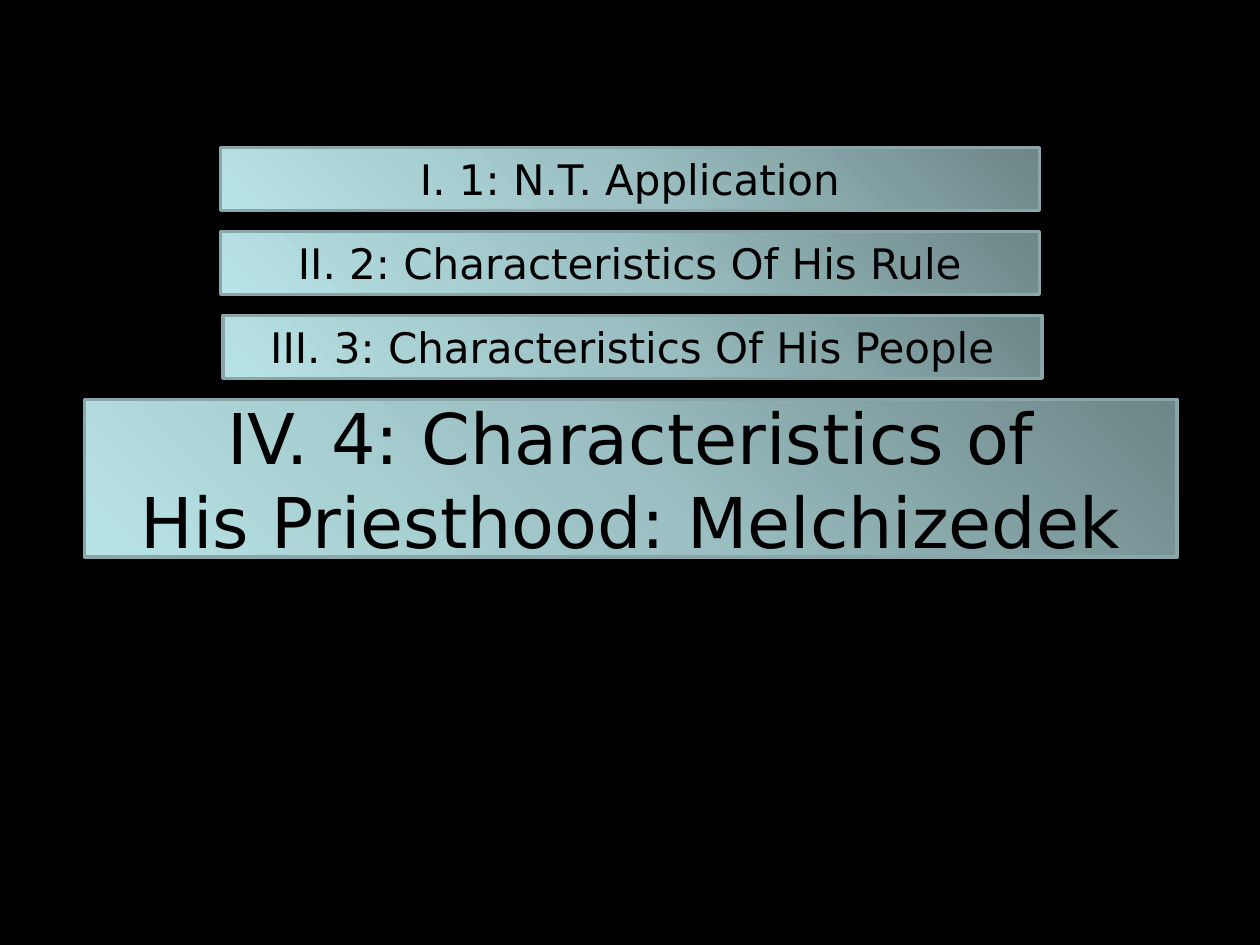
from lxml import etree
from pptx import Presentation
from pptx.dml.color import RGBColor
from pptx.enum.shapes import MSO_SHAPE as Shape
from pptx.enum.text import MSO_ANCHOR as Anchor, PP_ALIGN as Align
from pptx.oxml.ns import qn
from pptx.util import Inches, Pt

BLACK = RGBColor(0x00, 0x00, 0x00)
DARK_TEAL = RGBColor(0x6D, 0x86, 0x88)
MID_TEAL = RGBColor(0x9B, 0xBF, 0xC2)
LIGHT_TEAL = RGBColor(0xB8, 0xE3, 0xE6)
BORDER = RGBColor(0x8A, 0xA6, 0xA8)


class OutlineSlide:
    """Holds the style and the slide being filled."""

    font_name = "DejaVu Sans"
    gradient = ((0, DARK_TEAL), (50, MID_TEAL), (100, LIGHT_TEAL))

    def __init__(self, presentation):
        self.slide = presentation.slides.add_slide(presentation.slide_layouts[6])
        background = self.slide.background.fill
        background.solid()
        background.fore_color.rgb = BLACK

    def add_gradient(self, shape):
        shape.fill.gradient()
        shape.fill.gradient_angle = 225  # counter-clockwise: dark at top right
        stops = shape._element.spPr.find(".//" + qn("a:gsLst"))
        stops.clear()
        for position, color in self.gradient:
            stop = etree.SubElement(stops, qn("a:gs"), pos=str(position * 1000))
            etree.SubElement(stop, qn("a:srgbClr"), val=str(color))

    def add_shadow(self, shape):
        shape.shadow.inherit = False
        effects = shape._element.spPr.find(qn("a:effectLst"))
        shadow = etree.SubElement(
            effects, qn("a:outerShdw"), blurRad=str(Pt(4)), dist=str(Pt(3)),
            dir=str(45 * 60000), rotWithShape="0")
        color = etree.SubElement(shadow, qn("a:srgbClr"), val=str(BLACK))
        etree.SubElement(color, qn("a:alpha"), val="40000")

    def add_bar(self, left, top, width, height, lines, size):
        shape = self.slide.shapes.add_shape(
            Shape.RECTANGLE, Inches(left), Inches(top), Inches(width), Inches(height))
        self.add_gradient(shape)
        shape.line.color.rgb = BORDER
        shape.line.width = Pt(2)
        self.add_shadow(shape)

        # Centred text, one run for each line
        frame = shape.text_frame
        frame.word_wrap = True
        frame.vertical_anchor = Anchor.MIDDLE
        paragraph = frame.paragraphs[0]
        paragraph.alignment = Align.CENTER
        for index, line in enumerate(lines):
            if index:
                paragraph.add_line_break()
            run = paragraph.add_run()
            run.text = line
            run.font.name = self.font_name
            run.font.size = Pt(size)
            run.font.color.rgb = BLACK


def main():
    presentation = Presentation()
    presentation.slide_width = Inches(10)
    presentation.slide_height = Inches(7.5)
    outline = OutlineSlide(presentation)

    # Outline points, evenly stacked
    first_top, step = 1.17, 2 / 3
    points = (
        (1.75, "I. 1: N.T. Application"),
        (1.75, "II. 2: Characteristics Of His Rule"),
        (1.77, "III. 3: Characteristics Of His People"),
    )
    for row, (left, text) in enumerate(points):
        outline.add_bar(left, first_top + row * step, 6.5, 0.5, [text], 24)

    # Current point, enlarged
    current_lines = ("IV. 4: Characteristics of", "His Priesthood: Melchizedek")
    outline.add_bar(0.67, first_top + len(points) * step, 8.67, 1.25, current_lines, 40)

    presentation.save("out.pptx")


if __name__ == "__main__":
    main()
